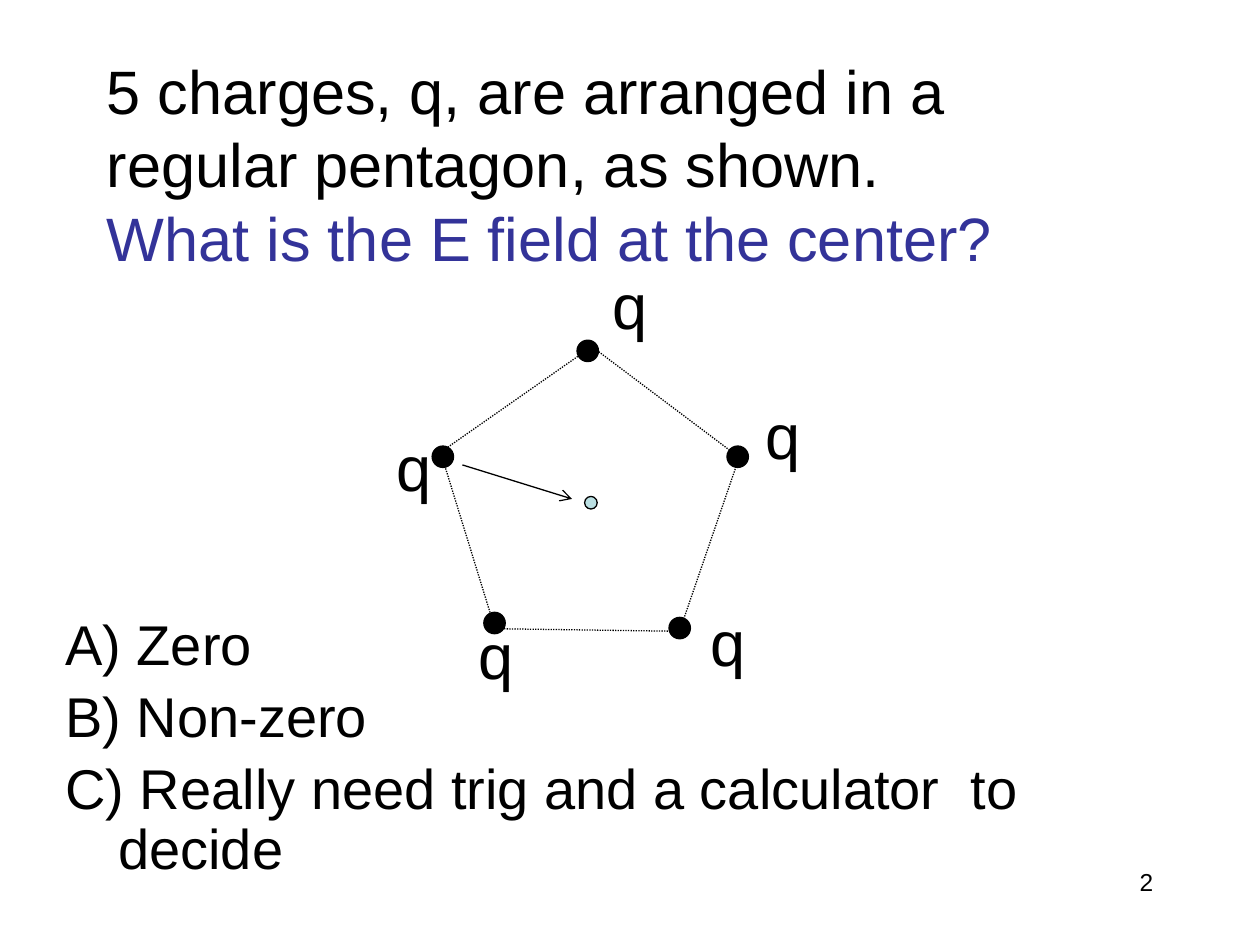
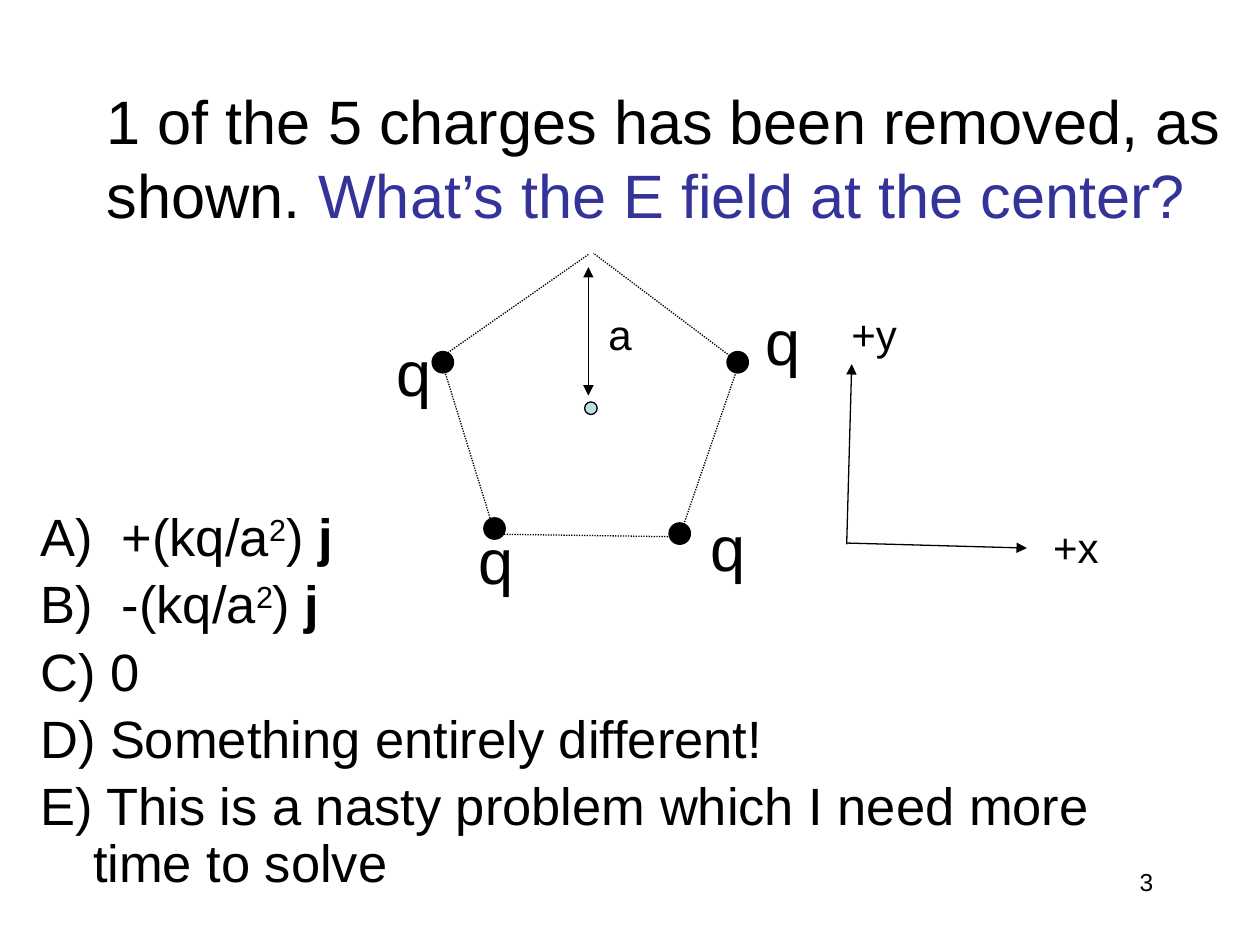
from pptx import Presentation
from pptx.dml.color import RGBColor
from pptx.enum.dml import MSO_LINE
from pptx.enum.shapes import MSO_CONNECTOR, MSO_SHAPE
from pptx.enum.text import MSO_ANCHOR, MSO_AUTO_SIZE, PP_ALIGN
from pptx.oxml.ns import qn
from pptx.util import Inches, Pt
from lxml.etree import SubElement

BLACK = RGBColor(0x00, 0x00, 0x00)
QUESTION_BLUE = RGBColor(0x33, 0x33, 0x99)
CENTER_BLUE = RGBColor(0xBB, 0xE0, 0xE3)
FONT = "Arial"

# Pentagon geometry, in inches, measured down from the top of its label area.
EDGES = [
    ((5.40, 2.92), (5.86, 1.58)),
    ((3.94, 2.92), (5.36, 2.94)),
    ((3.50, 1.53), (3.92, 2.89)),
    ((4.67, 0.70), (3.51, 1.51)),
    ((5.84, 1.54), (4.71, 0.69)),
]
# Left and top of each charge, then of its label; the apex comes first.
CHARGES = [
    ((4.58, 0.63), (4.76, 0.00)),
    ((5.77, 1.47), (5.98, 1.03)),
    ((5.31, 2.83), (5.54, 2.67)),
    ((3.84, 2.79), (3.70, 2.77)),
    ((3.43, 1.47), (3.05, 1.28)),
]
CENTER = (4.64, 1.87)


class Deck:
    def __init__(self):
        self.presentation = Presentation()
        self.presentation.slide_width = Inches(10)
        self.presentation.slide_height = Inches(7.5)
        self.shapes = None

    def new_slide(self, number):
        layout = self.presentation.slide_layouts[6]
        self.shapes = self.presentation.slides.add_slide(layout).shapes
        frame = self.text_frame(7.17, 6.83, 2.08, 0.5)
        frame.paragraphs[0].alignment = PP_ALIGN.RIGHT
        self.add_run(frame.paragraphs[0], str(number), 14)

    def text_frame(self, left, top, width, height, wrap=True):
        box = self.shapes.add_textbox(Inches(left), Inches(top), Inches(width), Inches(height))
        box.text_frame.word_wrap = wrap
        return box.text_frame

    def add_run(self, paragraph, text, size, color=BLACK, bold=False, superscript=False):
        run = paragraph.add_run()
        run.text = text
        run.font.name = FONT
        run.font.size = Pt(size)
        run.font.bold = bold
        run.font.color.rgb = color
        if superscript:
            run._r.get_or_add_rPr().set("baseline", "30000")

    def title(self, top, width, statement, question, break_line=False):
        frame = self.text_frame(0.75, top, width, 1.25)
        frame.vertical_anchor = MSO_ANCHOR.MIDDLE
        paragraph = frame.paragraphs[0]
        self.add_run(paragraph, statement, 35)
        if break_line:
            paragraph.add_line_break()
        self.add_run(paragraph, question, 35, QUESTION_BLUE)

    def answers(self, left, top, width, size, answers, lettered=False):
        """Each answer is a list of (text, run options); lettered adds automatic A), B), C)."""
        frame = self.text_frame(left, top, width, 2)
        for index, runs in enumerate(answers):
            paragraph = frame.add_paragraph() if index else frame.paragraphs[0]
            paragraph.line_spacing = 0.9
            paragraph.space_before = Pt(0.2 * size)
            properties = paragraph._p.get_or_add_pPr()
            properties.set("marL", str(Inches(0.42)))
            properties.set("indent", str(-Inches(0.42)))
            if lettered:
                SubElement(properties, qn("a:buFont")).set("typeface", FONT)
                SubElement(properties, qn("a:buAutoNum")).set("type", "alphaUcParenR")
            for text, options in runs:
                self.add_run(paragraph, text, size, **options)

    def label(self, left, top, width, text, size):
        height = 0.7 if size == 36 else 0.5
        frame = self.text_frame(left, top, width, height, wrap=False)
        frame.auto_size = MSO_AUTO_SIZE.SHAPE_TO_FIT_TEXT
        self.add_run(frame.paragraphs[0], text, size)

    def dot(self, left, top, diameter, color):
        shape = self.shapes.add_shape(
            MSO_SHAPE.OVAL, Inches(left), Inches(top), Inches(diameter), Inches(diameter))
        shape.shadow.inherit = False
        shape.fill.solid()
        shape.fill.fore_color.rgb = color
        shape.line.color.rgb = BLACK
        shape.line.width = Pt(0.75)

    def line(self, start, end, dash=None, head=None, tail=None):
        points = [Inches(value) for value in (*start, *end)]
        connector = self.shapes.add_connector(MSO_CONNECTOR.STRAIGHT, *points)
        connector.line.color.rgb = BLACK
        connector.line.width = Pt(0.75)
        if dash:
            connector.line.dash_style = dash
        properties = connector._element.spPr
        outline = properties.find(qn("a:ln"))
        for tag, kind in (("a:headEnd", head), ("a:tailEnd", tail)):
            if kind:
                SubElement(outline, qn(tag)).set("type", kind)
        SubElement(properties, qn("a:effectLst"))

    def pentagon(self, top, charges):
        """Draw the dotted pentagon, its center and the given charges as one group."""
        slide_shapes = self.shapes
        self.shapes = slide_shapes.add_group_shape().shapes
        for (x1, y1), (x2, y2) in EDGES:
            self.line((x1, top + y1), (x2, top + y2), dash=MSO_LINE.ROUND_DOT)
        for (x, y), _ in charges:
            self.dot(x, top + y, 0.17, BLACK)
        self.dot(CENTER[0], top + CENTER[1], 0.1, CENTER_BLUE)
        for _, (x, y) in charges:
            self.label(x, top + y, 0.48, "q", 36)
        self.shapes = slide_shapes


def field_answer(start):
    return [(start, {}), ("2", {"superscript": True}), (") ", {}), ("j", {"bold": True})]


def five_charges(deck):
    deck.new_slide(2)
    deck.title(0.67, 8.5, "5 charges, q, are arranged in a regular pentagon, as shown. ",
               "What is the E field at the center?", break_line=True)
    answers = [" Zero", " Non-zero", " Really need trig and a calculator  to decide"]
    deck.answers(0.42, 4.85, 8.5, 32, [[(text, {})] for text in answers], lettered=True)
    deck.pentagon(2.07, CHARGES)
    deck.line((3.67, 3.69), (4.54, 3.96), tail="arrow")


def one_charge_removed(deck):
    deck.new_slide(3)
    deck.title(0.62, 9.1, "1 of the 5 charges has been removed, as shown. ",
               "What’s the E field at the center?")
    deck.pentagon(1.32, CHARGES[1:])
    deck.answers(0.22, 4.01, 9.22, 30, [
        field_answer("A)  +(kq/a"),
        field_answer("B)  -(kq/a"),
        [("C) 0", {})],
        [("D) Something entirely different!", {})],
        [("E) This is a nasty problem which I need more time to solve", {})],
    ])
    deck.line((6.72, 4.31), (8.15, 4.35), tail="triangle")
    deck.label(8.26, 4.09, 0.56, "+x", 24)
    deck.line((6.72, 4.32), (6.76, 2.89), tail="triangle")
    deck.label(6.66, 2.4, 0.56, "+y", 24)
    deck.line((4.67, 2.12), (4.67, 3.14), head="triangle", tail="triangle")
    deck.label(4.73, 2.4, 0.39, "a", 24)


def main():
    deck = Deck()
    five_charges(deck)
    one_charge_removed(deck)
    deck.presentation.save("out.pptx")


if __name__ == "__main__":
    main()
